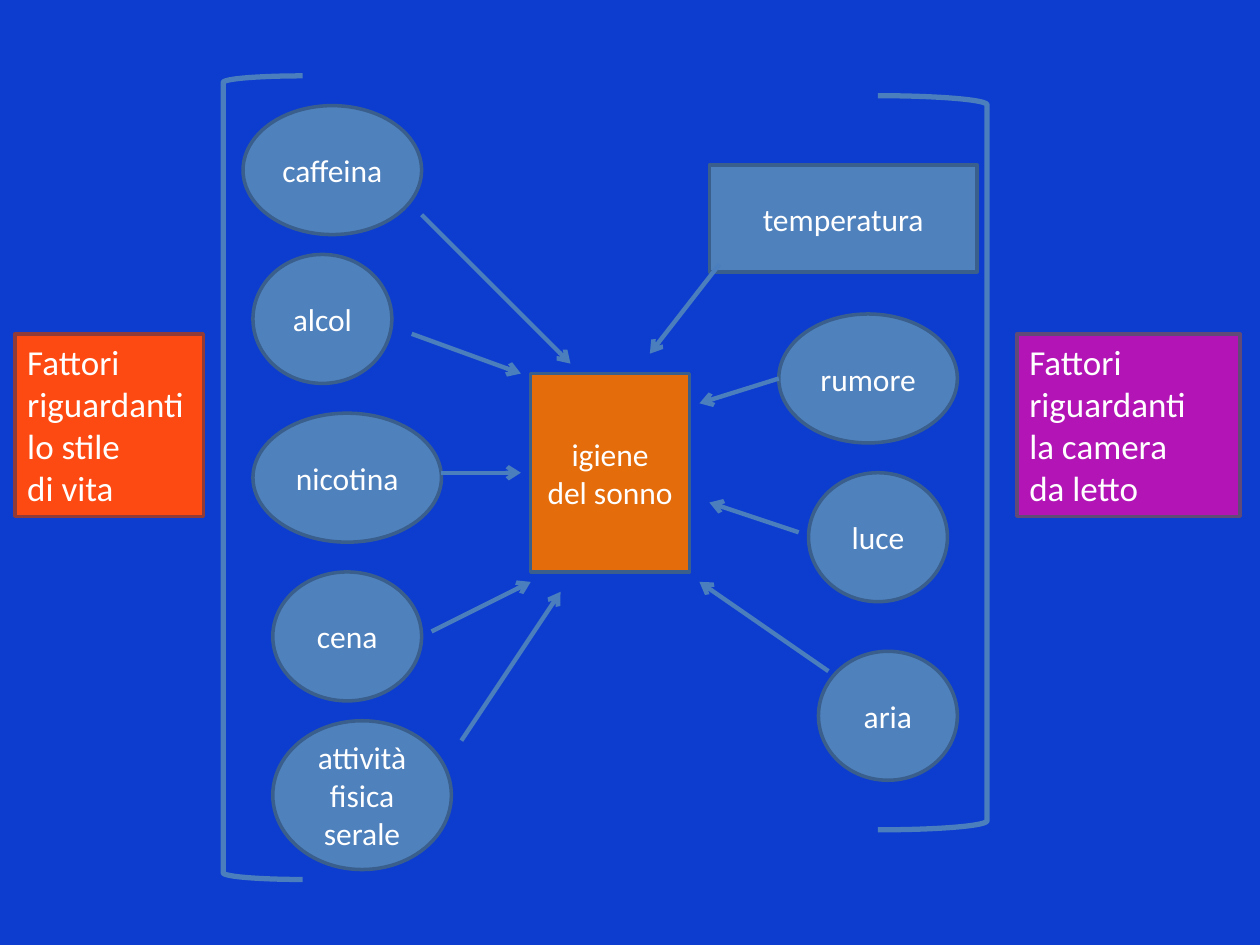
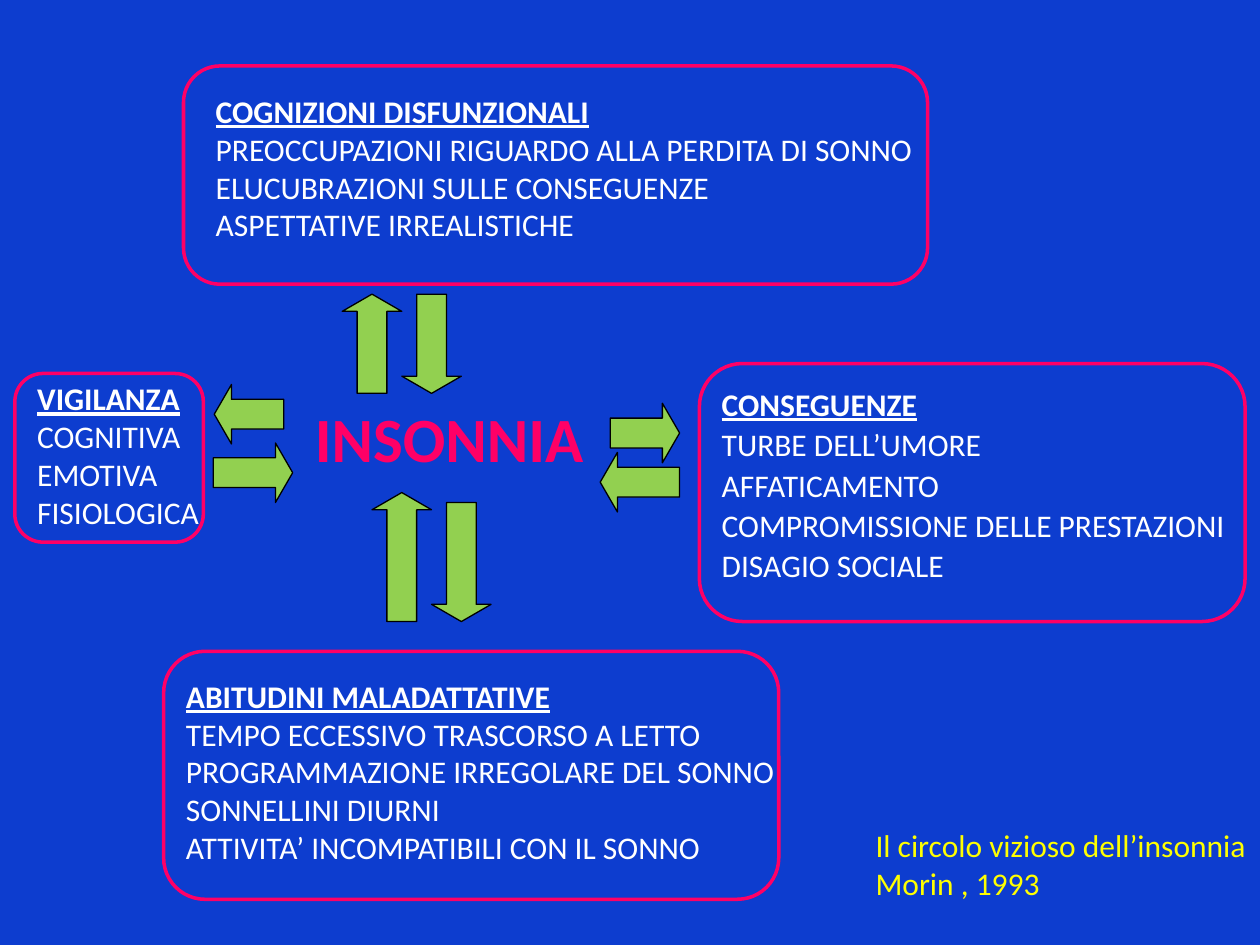
import pptx
import pptx.util
import pptx.dml.color
import pptx.enum.shapes
import pptx.enum.text
import pptx.oxml.ns
import lxml.etree

Cm = pptx.util.Cm
Pt = pptx.util.Pt
RGB = pptx.dml.color.RGBColor.from_string
SHAPE = pptx.enum.shapes.MSO_SHAPE
ALIGN = pptx.enum.text.PP_ALIGN
ANCHOR = pptx.enum.text.MSO_ANCHOR

COLORS = {
    "background": "0D3DCF",
    "white": "FFFFFF",
    "blue": "4F81BD",
    "blue_edge": "3A5F8C",
    "connector": "4B7EBC",
    "hygiene": "E46C0A",
    "lifestyle": "FC4A12",
    "lifestyle_edge": "8E3B39",
    "bedroom": "B214B6",
    "bedroom_edge": "5F4A78",
    "pink": "FF0066",
    "green": "92D050",
    "black": "000000",
    "yellow": "FFFF00",
}


def add_shape(slide, kind, box, fill, line, width):
    shape = slide.shapes.add_shape(kind, *[Cm(length) for length in box])
    shape.shadow.inherit = False
    if fill:
        shape.fill.solid()
        shape.fill.fore_color.rgb = RGB(COLORS[fill])
    else:
        shape.fill.background()
    shape.line.color.rgb = RGB(COLORS[line])
    shape.line.width = Pt(width)
    return shape


def write(shape, lines, size=18, color="white", align=ALIGN.LEFT,
          anchor=ANCHOR.TOP, heading=False):
    frame = shape.text_frame
    frame.word_wrap = True
    frame.vertical_anchor = anchor
    for index, line in enumerate(lines):
        paragraph = frame.add_paragraph() if index else frame.paragraphs[0]
        paragraph.alignment = align
        run = paragraph.add_run()
        run.text = line
        run.font.name = "Calibri"
        run.font.size = Pt(size)
        run.font.color.rgb = RGB(COLORS[color])
        if heading and index == 0:
            run.font.bold = True
            run.font.underline = True
    return frame


presentation = pptx.Presentation()
presentation.slide_width = Cm(25.4)
presentation.slide_height = Cm(19.05)
slides = []
for number in range(2):
    slide = presentation.slides.add_slide(presentation.slide_layouts[6])
    slide.background.fill.solid()
    slide.background.fill.fore_color.rgb = RGB(COLORS["background"])
    slides.append(slide)
hygiene_slide, insomnia_slide = slides

factors = [
    ("caffeina", SHAPE.OVAL, (4.9, 2.13, 3.6, 2.6)),
    ("alcol", SHAPE.OVAL, (5.1, 5.13, 2.8, 2.6)),
    ("nicotina", SHAPE.OVAL, (5.1, 8.33, 3.8, 2.6)),
    ("cena", SHAPE.OVAL, (5.5, 11.53, 3, 2.6)),
    ("attività fisica serale", SHAPE.OVAL, (5.5, 14.53, 3.6, 3)),
    ("temperatura", SHAPE.RECTANGLE, (14.3, 3.33, 5.4, 2.15)),
    ("rumore", SHAPE.OVAL, (15.7, 6.33, 3.6, 2.6)),
    ("luce", SHAPE.OVAL, (16.3, 9.53, 2.8, 2.6)),
    ("aria", SHAPE.OVAL, (16.5, 13.13, 2.8, 2.6)),
]
for label, kind, box in factors:
    shape = add_shape(hygiene_slide, kind, box, "blue", "blue_edge", 2)
    write(shape, [label], align=ALIGN.CENTER, anchor=ANCHOR.MIDDLE)

hygiene = add_shape(hygiene_slide, SHAPE.RECTANGLE, (10.7, 7.53, 3.2, 4),
                    "hygiene", "blue_edge", 2)
write(hygiene, ["igiene", "del sonno"], align=ALIGN.CENTER, anchor=ANCHOR.MIDDLE)

for kind, box in [(SHAPE.LEFT_BRACKET, (4.5, 1.53, 1.6, 16.2)),
                  (SHAPE.RIGHT_BRACKET, (17.7, 1.93, 2.2, 14.8))]:
    add_shape(hygiene_slide, kind, box, None, "connector", 3)

groups = [
    (0.3, 3.8, "lifestyle", ["lo stile", "di vita"]),
    (20.5, 4.5, "bedroom", ["la camera", "da letto"]),
]
for left, width, color, ending in groups:
    shape = add_shape(hygiene_slide, SHAPE.RECTANGLE, (left, 6.73, width, 3.68),
                      color, color + "_edge", 2)
    write(shape, ["Fattori riguardanti"] + ending, size=20)

factor_arrows = [
    (8.5, 4.33, 11.5, 7.33),
    (8.3, 6.73, 10.5, 7.53),
    (8.9, 9.53, 10.5, 9.53),
    (8.7, 12.73, 10.7, 11.73),
    (9.3, 14.93, 11.3, 11.93),
    (14.5, 5.33, 13.1, 7.13),
    (15.7, 7.63, 14.1, 8.13),
    (16.1, 10.73, 14.3, 10.13),
    (16.7, 13.53, 14.1, 11.73),
]
for ends in factor_arrows:
    connector = hygiene_slide.shapes.add_connector(
        pptx.enum.shapes.MSO_CONNECTOR.STRAIGHT, *[Cm(length) for length in ends])
    connector.line.color.rgb = RGB(COLORS["connector"])
    connector.line.width = Pt(2.5)
    line = connector.line._get_or_add_ln()
    lxml.etree.SubElement(line, pptx.oxml.ns.qn("a:tailEnd"), type="arrow")
    lxml.etree.SubElement(connector._element.spPr, pptx.oxml.ns.qn("a:effectLst"))

panels = [
    ((3.7, 1.33, 15, 4.4), (4.1, 1.73, 15, 3.32),
     ["COGNIZIONI DISFUNZIONALI", "PREOCCUPAZIONI RIGUARDO ALLA PERDITA DI SONNO",
      "ELUCUBRAZIONI SULLE CONSEGUENZE", "ASPETTATIVE IRREALISTICHE"]),
    ((0.3, 7.53, 3.8, 3.4), (0.5, 7.52, 3.9, 3.32),
     ["VIGILANZA", "COGNITIVA", "EMOTIVA", "FISIOLOGICA"]),
    ((3.3, 13.13, 12.4, 5), (3.5, 13.52, 12.7, 4.12),
     ["ABITUDINI MALADATTATIVE", "TEMPO ECCESSIVO TRASCORSO A LETTO",
      "PROGRAMMAZIONE IRREGOLARE DEL SONNO", "SONNELLINI DIURNI",
      "ATTIVITA’ INCOMPATIBILI CON IL SONNO"]),
    ((14.1, 7.33, 11, 5.2), (14.3, 7.72, 11.6, 4.35),
     ["CONSEGUENZE", "TURBE DELL’UMORE", "AFFATICAMENTO",
      "COMPROMISSIONE DELLE PRESTAZIONI", "DISAGIO SOCIALE"]),
]
for outline, text_area, lines in panels:
    add_shape(insomnia_slide, SHAPE.ROUNDED_RECTANGLE, outline, None, "pink", 2)
    text_box = insomnia_slide.shapes.add_textbox(*[Cm(length) for length in text_area])
    frame = write(text_box, lines, heading=True)
for paragraph in frame.paragraphs:
    paragraph.line_spacing = 0.9
    paragraph.space_before = Pt(3.6)

insomnia = insomnia_slide.shapes.add_textbox(Cm(6.1), Cm(7.93), Cm(6.1), Cm(1.8))
frame = write(insomnia, ["INSONNIA"], size=36, color="pink")
frame.paragraphs[0].runs[0].font.bold = True

cycle_arrows = [
    (6.9, 5.93, 2, 0),
    (8.1, 5.93, 2, 180),
    (7.5, 9.93, 2.6, 0),
    (8.7, 10.13, 2.4, 180),
    (4.42, 7.65, 1.4, 270),
    (4.5, 8.73, 1.6, 90),
    (12.4, 8.03, 1.4, 90),
    (12.3, 8.92, 1.6, 270),
]
for left, top, length, rotation in cycle_arrows:
    arrow = add_shape(insomnia_slide, SHAPE.UP_ARROW, (left, top, 1.2, length),
                      "green", "black", 0.75)
    arrow.adjustments[1] = 0.29
    arrow.rotation = rotation

caption = insomnia_slide.shapes.add_textbox(Cm(17.4), Cm(16.53), Cm(8), Cm(1.8))
write(caption, ["Il circolo vizioso dell’insonnia", "Morin , 1993"], color="yellow")

presentation.save("out.pptx")
